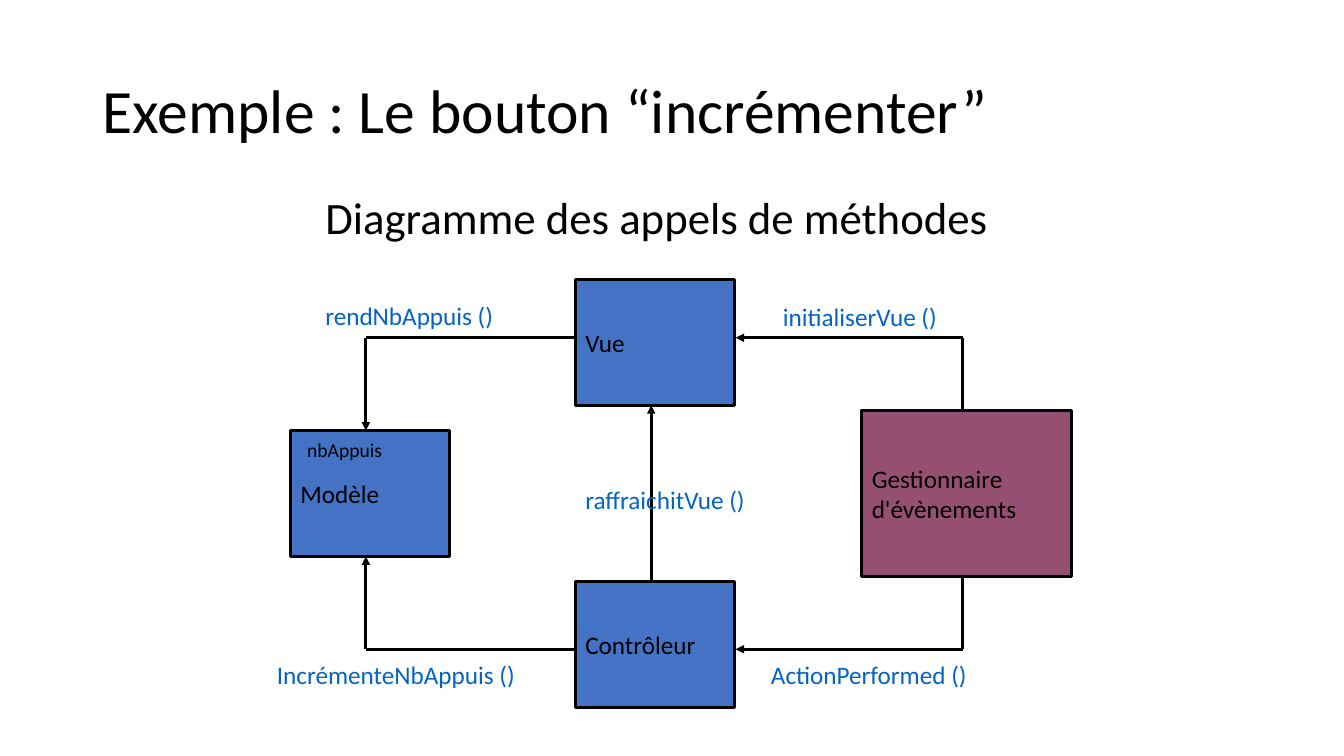
from itertools import pairwise

from lxml import etree
from pptx import Presentation
from pptx.dml.color import RGBColor
from pptx.enum import shapes, text
from pptx.oxml import ns
from pptx.util import Cm, Pt

BLACK = RGBColor(0x00, 0x00, 0x00)
BLUE = RGBColor(0x44, 0x72, 0xC4)
PLUM = RGBColor(0x95, 0x4F, 0x72)
LINK = RGBColor(0x05, 0x63, 0xC1)
MID = text.MSO_ANCHOR.MIDDLE
TOP = text.MSO_ANCHOR.TOP

# Box size and the axes shared by boxes and arrows, in cm
WIDE, HIGH = 4.01, 3.18
LEFT, RIGHT = 14.5, 18.54
MODEL, AXIS, EVENT = 9.22, 16.41, 24.26
UPPER, LOWER = 8.51, 16.36


def put(obj, form):
    for name, value in form.items():
        setattr(obj, name, value)


def write(shape, words, size, color=BLACK, space=1.0, anchor=MID, wrap=True):
    frame = shape.text_frame
    frame.text = words
    put(frame, {"vertical_anchor": anchor, "word_wrap": wrap})
    para = frame.paragraphs[0]
    put(para, {"alignment": text.PP_ALIGN.LEFT, "line_spacing": space})
    for run in para.runs:
        put(run.font, {"name": "Calibri", "size": Pt(size)})
        run.font.color.rgb = color


def label(slide, words, x, y, w, h, size=18, **form):
    area = slide.shapes.add_textbox(Cm(x), Cm(y), Cm(w), Cm(h))
    write(area, words, size, **form)


def box(slide, words, x, y, w=WIDE, h=HIGH, fill=BLUE):
    rect = slide.shapes.add_shape(
        shapes.MSO_SHAPE.RECTANGLE, Cm(x), Cm(y), Cm(w), Cm(h))
    rect.shadow.inherit = False
    rect.fill.solid()
    rect.fill.fore_color.rgb = fill
    rect.line.color.rgb = BLACK
    rect.line.width = Pt(2)
    write(rect, words, 18)


def call(slide, *points):
    """Draw a bent line through the points, with an arrowhead at the last."""
    for start, end in pairwise(points):
        line = slide.shapes.add_connector(
            shapes.MSO_CONNECTOR.STRAIGHT, *map(Cm, start + end))
        line.line.color.rgb = BLACK
        line.line.width = Pt(2)
        if end == points[-1]:
            tail = etree.SubElement(line.line._get_or_add_ln(), ns.qn("a:tailEnd"))
            tail.set("type", "triangle")
        etree.SubElement(line._element.spPr, ns.qn("a:effectLst"))


def main():
    deck = Presentation()
    put(deck, {"slide_width": Cm(33.87), "slide_height": Cm(19.05)})
    slide = deck.slides.add_slide(deck.slide_layouts[6])

    # Headings
    label(slide, "Exemple : Le bouton “incrémenter”",
          2.34, 1.02, 29.21, 3.68, 44, space=0.9)
    label(slide, "Diagramme des appels de méthodes",
          7.95, 4.62, 25.4, 1.83, 32, space=0.9)

    # Components
    box(slide, "Vue", LEFT, 7.04)
    box(slide, "Contrôleur", LEFT, 14.66)
    box(slide, "Modèle", 7.32, 10.85)

    # Calls between components
    call(slide, (LEFT, UPPER), (MODEL, UPPER), (MODEL, 10.85))
    call(slide, (LEFT, LOWER), (MODEL, LOWER), (MODEL, 14.02))
    call(slide, (EVENT, 10.41), (EVENT, UPPER), (RIGHT, UPPER))
    call(slide, (EVENT, 14.45), (EVENT, LOWER), (RIGHT, LOWER))
    call(slide, (AXIS, 14.66), (AXIS, 10.21))

    # Method names
    for words, x, y, w in (
        ("initialiserVue ()", 19.48, 7.47, 4.55),
        ("ActionPerformed ()", 19.18, 16.48, 5.61),
        ("raffraichitVue ()", 14.5, 12.09, 4.67),
        ("rendNbAppuis ()", 7.95, 7.44, 4.93),
        ("IncrémenteNbAppuis ()", 6.73, 16.48, 6.73),
    ):
        label(slide, words, x, y, w, 0.94, color=LINK, anchor=TOP, wrap=False)
    label(slide, "nbAppuis", 7.49, 10.92, 2.79, 0.84, 14, anchor=TOP, wrap=False)

    # Event manager
    box(slide, "Gestionnaire\vd'évènements", 21.72, 10.34, 5.28, 4.19, PLUM)

    deck.save("out.pptx")


if __name__ == "__main__":
    main()
